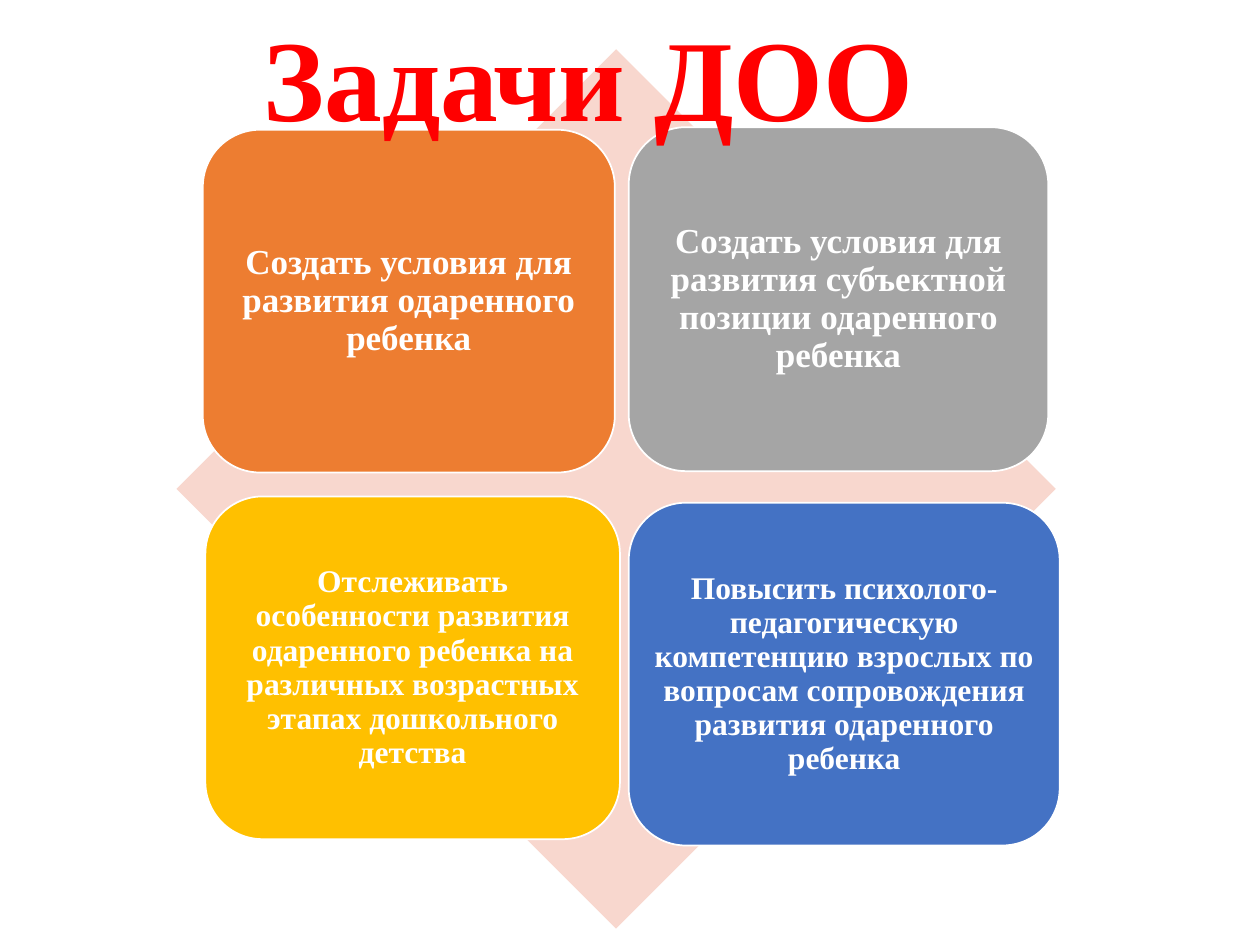
import dataclasses

import pptx
import pptx.dml.color
import pptx.enum.shapes
import pptx.enum.text
import pptx.util

Inches = pptx.util.Inches
Shape = pptx.enum.shapes.MSO_SHAPE
Anchor = pptx.enum.text.MSO_ANCHOR


@dataclasses.dataclass(frozen=True)
class Theme:
    font: str = "Times New Roman"
    title_size: int = 66
    large_size: int = 20
    small_size: int = 18
    title: str = "FF0000"
    light: str = "FFFFFF"
    diamond: str = "F8D7CE"
    orange: str = "ED7D31"
    gray: str = "A5A5A5"
    gold: str = "FFC000"
    blue: str = "4472C4"


@dataclasses.dataclass(frozen=True)
class Card:
    left: float
    top: float
    width: float
    height: float
    fill: str
    size: int
    inset: float
    text: str


THEME = Theme()
CARDS = (
    Card(1.61, 1.03, 3.27, 2.72, THEME.orange, THEME.large_size, 0.08,
         "Создать условия для развития одаренного ребенка"),
    Card(4.99, 1.01, 3.33, 2.73, THEME.gray, THEME.large_size, 0.08,
         "Создать условия для развития субъектной позиции одаренного ребенка"),
    Card(1.63, 3.94, 3.29, 2.72, THEME.gold, THEME.small_size, 0.07,
         "Отслеживать особенности развития одаренного ребенка на различных "
         "возрастных этапах дошкольного детства"),
    Card(4.99, 3.99, 3.42, 2.72, THEME.blue, THEME.small_size, 0.07,
         "Повысить психолого-педагогическую компетенцию взрослых по вопросам "
         "сопровождения развития одаренного ребенка"),
)


def color(value: str) -> pptx.dml.color.RGBColor:
    return pptx.dml.color.RGBColor.from_string(value)


def set_all(target, values: dict) -> None:
    for name, value in values.items():
        setattr(target, name, value)


def add_filled(page, kind, left: float, top: float, width: float, height: float, fill: str):
    shape = page.shapes.add_shape(kind, *map(Inches, (left, top, width, height)))
    shape.shadow.inherit = False
    shape.fill.solid()
    shape.fill.fore_color.rgb = color(fill)
    shape.line.fill.background()
    return shape


def write(box, text: str, size: int, ink: str, frame_format: dict, spacing: float) -> None:
    set_all(box.text_frame, {"word_wrap": True, **frame_format})
    para = box.text_frame.paragraphs[0]
    set_all(para, {"alignment": pptx.enum.text.PP_ALIGN.CENTER, "line_spacing": spacing})
    span = para.add_run()
    span.text = text
    set_all(span.font, {"name": THEME.font, "size": pptx.util.Pt(size), "bold": True})
    span.font.color.rgb = color(ink)


def add_card(page, card: Card) -> None:
    box = add_filled(page, Shape.ROUNDED_RECTANGLE, card.left, card.top,
                     card.width, card.height, card.fill)
    box.line.color.rgb = color(THEME.light)
    box.line.width = pptx.util.Pt(1)
    margins = {f"margin_{side}": Inches(card.inset) for side in ("left", "top", "right", "bottom")}
    write(box, card.text, card.size, THEME.light,
          {"vertical_anchor": Anchor.MIDDLE, **margins}, 0.9)


def add_title(page, text: str) -> None:
    box = page.shapes.add_textbox(Inches(0.15), Inches(0), Inches(8.35), Inches(1.21))
    write(box, text, THEME.title_size, THEME.title,
          {"vertical_anchor": Anchor.TOP, "margin_left": Inches(0.79)}, 1.0)


def main() -> None:
    """Build the slide of four tasks over a diamond."""
    deck = pptx.Presentation()
    set_all(deck, {"slide_width": Inches(10), "slide_height": Inches(7.5)})
    page = deck.slides.add_slide(deck.slide_layouts[6])
    add_filled(page, Shape.DIAMOND, 1.4, 0.39, 6.98, 6.98, THEME.diamond)
    for card in CARDS:
        add_card(page, card)
    add_title(page, "Задачи ДОО")
    deck.save("out.pptx")


if __name__ == "__main__":
    main()
